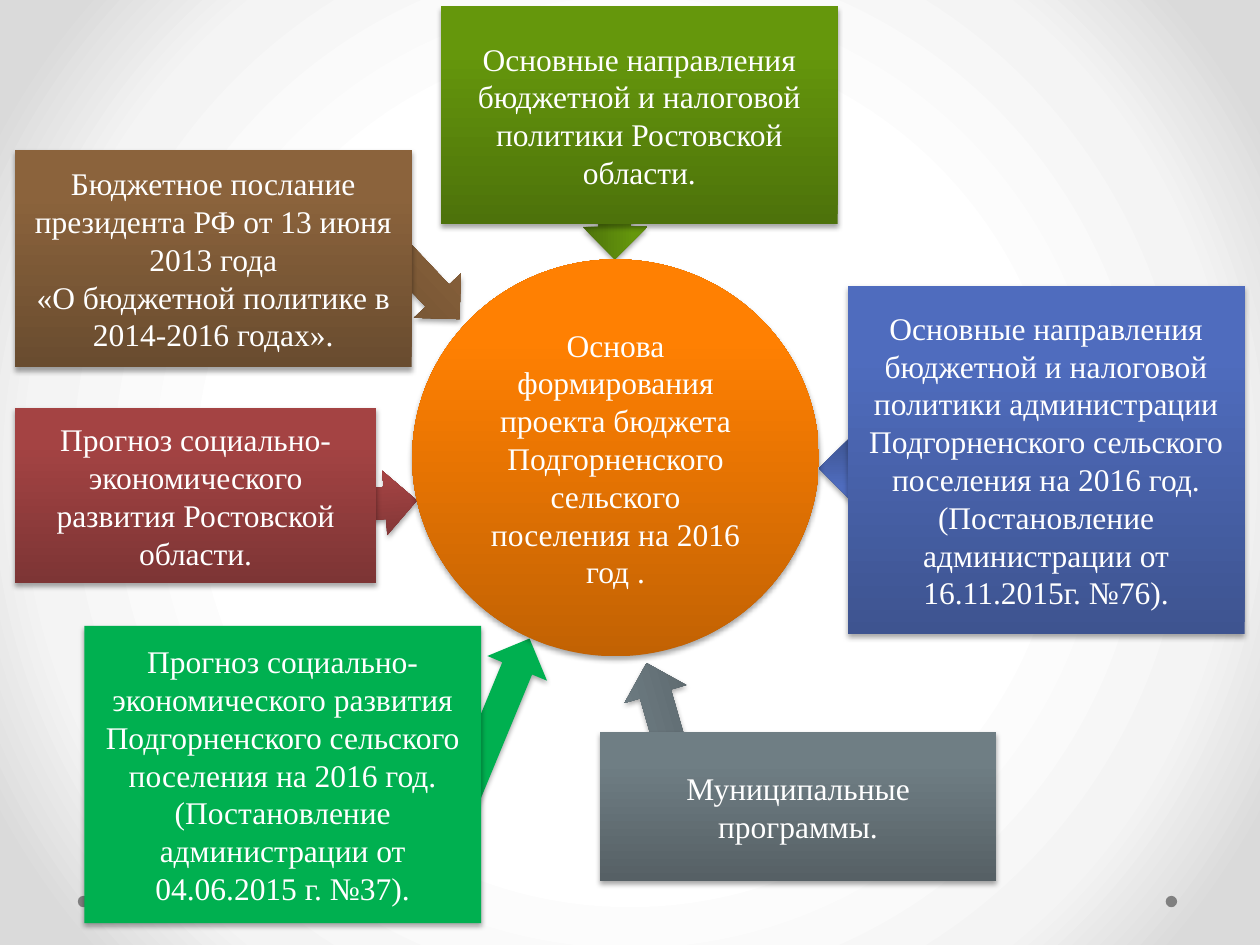
from pptx import Presentation
from pptx.dml.color import RGBColor
from pptx.enum.shapes import MSO_SHAPE
from pptx.enum.text import MSO_ANCHOR, PP_ALIGN
from pptx.oxml import parse_xml
from pptx.oxml.ns import nsdecls, qn
from pptx.util import Cm, Pt

RECT = MSO_SHAPE.RECTANGLE
OVAL = MSO_SHAPE.OVAL
ARROW = MSO_SHAPE.RIGHT_ARROW
MIDDLE = MSO_ANCHOR.MIDDLE
CENTER = PP_ALIGN.CENTER

COLORS = {
    "white": ["FFFFFF"],
    "dot": ["808080"],
    "green": ["00B050"],
    "brown": ["694C2F", "8B633C"],
    "red": ["7D3535", "A44343"],
    "blue": ["3E5490", "4F6CBE"],
    "olive": ["4D720B", "65970C"],
    "slate": ["566065", "6F7E84"],
    "orange": ["C26203", "FF8002"],
}
BACK = [(50, "FFFFFF"), (76, "F4F4F4"), (92, "DADADA")]

ARROWS = [
    ("brown", 6.22, 4.47, 46.7),
    ("red", 4.8, 9.58, 355.5),
    ("green", 8.18, 13.89, 292.5),
    ("blue", 16.51, 8.79, 180),
    ("olive", 10.59, 2.77, 90),
    ("slate", 11.73, 14.45, 253.9),
]
BOXES = [
    ("olive", (8.89, 0.13, 8, 4.39),
     "Основные направления бюджетной и налоговой политики Ростовской области."),
    ("brown", (0.3, 3.02, 8, 4.39),
     "Бюджетное послание президента РФ от 13 июня 2013 года\n"
     "«О бюджетной политике в 2014-2016 годах»."),
    ("slate", (12.09, 14.76, 8, 3), "Муниципальные программы."),
    ("red", (0.3, 8.23, 7.29, 3.53),
     "Прогноз социально-экономического развития Ростовской области."),
    ("blue", (17.09, 5.77, 8, 7.01),
     "Основные направления бюджетной и налоговой политики администрации "
     "Подгорненского сельского поселения на 2016 год.\n"
     "(Постановление администрации от 16.11.2015г. №76)."),
    ("green", (1.7, 12.62, 8, 5.99),
     "Прогноз социально-экономического развития Подгорненского сельского "
     "поселения на 2016 год.\n"
     "(Постановление администрации от 04.06.2015 г. №37)."),
]


class Deck:
    """Hold the style and the current slide, and draw each kind of element."""

    font = "Times New Roman"
    size = Pt(18)

    def __init__(self, slide):
        self.slide = slide

    def back(self, stops):
        marks = "".join(
            f'<a:gs pos="{pos * 1000}"><a:srgbClr val="{color}"/></a:gs>'
            for pos, color in stops)
        self.slide.element.cSld.insert(0, parse_xml(
            f'<p:bg {nsdecls("p", "a")}><p:bgPr><a:gradFill rotWithShape="1">'
            f'<a:gsLst>{marks}</a:gsLst><a:path path="circle">'
            '<a:fillToRect l="50000" t="50000" r="50000" b="50000"/></a:path>'
            '</a:gradFill><a:effectLst/></p:bgPr></p:bg>'))

    def shape(self, kind, color, box):
        shape = self.slide.shapes.add_shape(kind, *map(Cm, box))
        shape.line.fill.background()
        shape.shadow.inherit = False
        tones = COLORS[color]
        if len(tones) == 1:
            shape.fill.solid()
            shape.fill.fore_color.rgb = RGBColor.from_string(tones[0])
        else:
            shape.fill.gradient()
            shape.fill.gradient_angle = 90
            for stop, tone, pos in zip(shape.fill.gradient_stops, tones, (0, 0.8)):
                stop.color.rgb = RGBColor.from_string(tone)
                stop.position = pos
        return shape

    def raised(self, kind, color, box):
        shape = self.shape(kind, color, box)
        shape.element.spPr.find(qn("a:effectLst")).append(parse_xml(
            f'<a:outerShdw {nsdecls("a")} blurRad="{Pt(3.1)}" dist="{Pt(1.8)}" '
            'dir="5400000" rotWithShape="0"><a:srgbClr val="000000">'
            '<a:alpha val="35000"/></a:srgbClr></a:outerShdw>'))
        return shape

    def arrow(self, color, left, top, angle):
        self.raised(ARROW, color, (left, top, 3.61, 1.3)).rotation = angle

    def label(self, kind, color, box, text):
        frame = self.raised(kind, color, box).text_frame
        frame.word_wrap = True
        frame.vertical_anchor = MIDDLE
        frame.text = text
        for para in frame.paragraphs:
            para.alignment = CENTER
            for run in para.runs:
                run.font.name = self.font
                run.font.size = self.size
                run.font.color.rgb = RGBColor.from_string(COLORS["white"][0])


def main():
    prs = Presentation()
    prs.slide_width, prs.slide_height = Cm(25.4), Cm(19.05)
    deck = Deck(prs.slides.add_slide(prs.slide_layouts[6]))
    deck.back(BACK)
    for left in (23.5, 1.57):
        deck.shape(OVAL, "dot", (left, 18.06, 0.23, 0.23))
    for arrow in ARROWS:
        deck.arrow(*arrow)
    deck.label(OVAL, "orange", (8.31, 5.23, 8.2, 8),
               "Основа формирования проекта бюджета Подгорненского "
               "сельского поселения на 2016 год .")
    for box in BOXES:
        deck.label(RECT, *box)
    prs.save("out.pptx")


if __name__ == "__main__":
    main()
